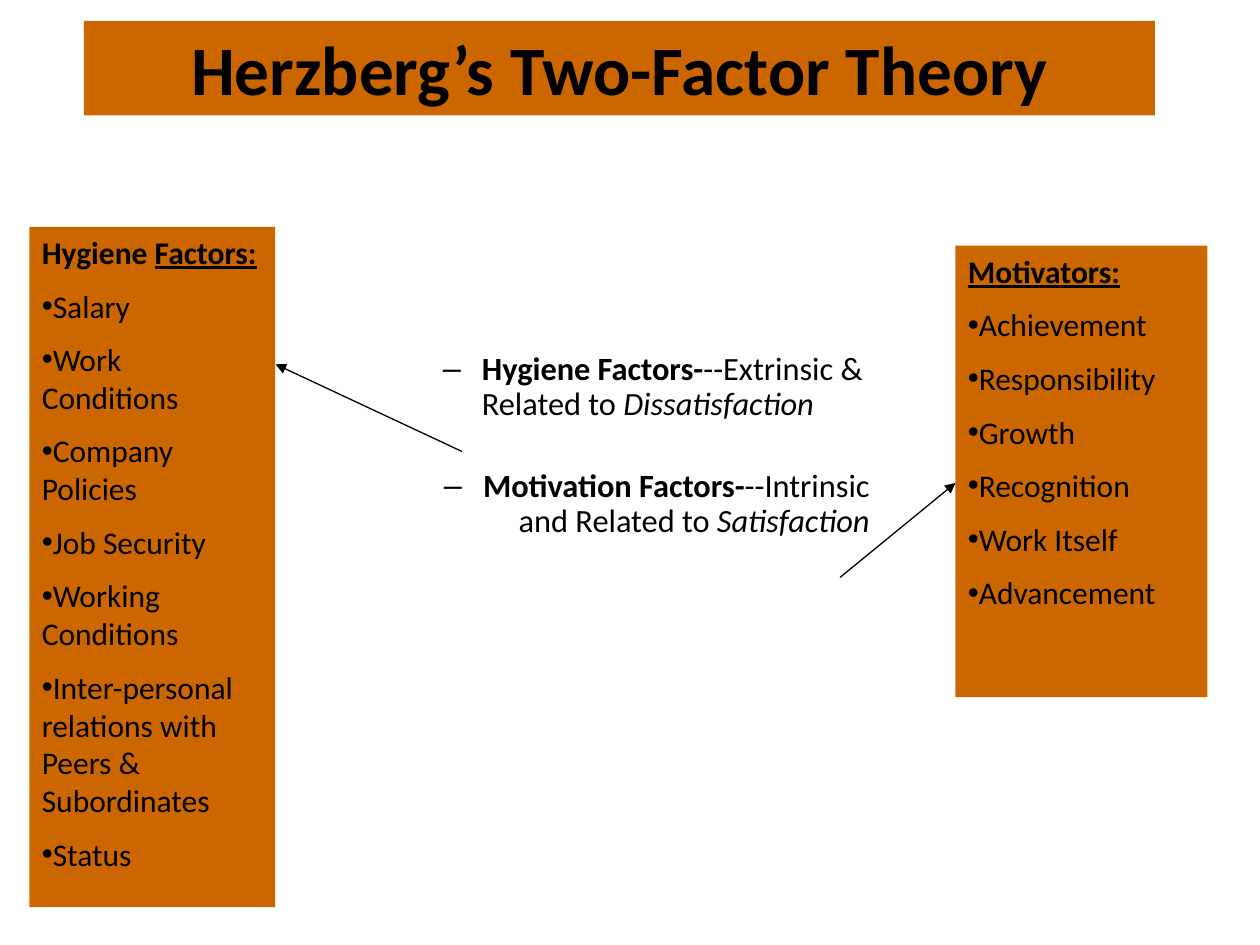
from dataclasses import dataclass

from lxml.etree import SubElement
from pptx import Presentation
from pptx.dml.color import RGBColor
from pptx.enum.shapes import MSO_CONNECTOR, MSO_SHAPE
from pptx.enum.text import MSO_ANCHOR, MSO_AUTO_SIZE, PP_ALIGN
from pptx.oxml.ns import qn
from pptx.util import Inches, Pt

COLORS = {"panel": "CC6600", "ink": "000000"}
FONT = "Calibri"
COLUMNS, ROWS = 120, 90

prs = Presentation()
prs.slide_width, prs.slide_height = Inches(10), Inches(7.5)


@dataclass
class Box:
    col: float
    row: float
    cols: float
    rows: float

    def place(self) -> tuple:
        return *grid(self.col, self.row), *grid(self.cols, self.rows)


@dataclass
class Panel:
    box: Box
    heading: list
    items: list


@dataclass
class Arrow:
    start: tuple
    end: tuple


@dataclass
class Factor:
    runs: list
    align: PP_ALIGN
    before: float


TITLE_BOX = Box(8, 2, 102, 9)
CENTER_BOX = Box(35, 33, 49, 25)
FACTORS = [
    Factor([("Hygiene Factors-", "b"), ("--Extrinsic & Related to ", ""),
            ("Dissatisfaction", "i")], PP_ALIGN.LEFT, 3.7),
    Factor([("Motivation Factors-", "b"), ("--Intrinsic and Related to ", ""),
            ("Satisfaction", "i")], PP_ALIGN.RIGHT, 27),
]
PANELS = [
    Panel(Box(2.8, 21.6, 23.4, 64.8), [("Hygiene ", "b"), ("Factors:", "bu")],
          ["Salary", "Work Conditions", "Company Policies", "Job Security",
           "Working Conditions",
           "Inter-personal relations with Peers & Subordinates", "Status"]),
    Panel(Box(91, 23.4, 24, 43), [("Motivators:", "bu")],
          ["Achievement", "Responsibility", "Growth", "Recognition",
           "Work Itself", "Advancement"]),
]
ARROWS = [Arrow((80, 55), (91, 46)), Arrow((44, 43), (26.25, 34.7))]


def grid(col: float, row: float) -> tuple:
    return int(prs.slide_width * col / COLUMNS), int(prs.slide_height * row / ROWS)


def rgb(name: str) -> RGBColor:
    return RGBColor.from_string(COLORS[name])


def write(p, runs: list, *, size: float, align=PP_ALIGN.LEFT, before: float = 0,
          spacing: float = 1, bullet: str = "", margin: float = 0,
          indent: float = 0) -> None:
    p.alignment, p.space_before, p.line_spacing = align, Pt(before), spacing
    pPr = p._p.get_or_add_pPr()
    pPr.set("marL", str(Inches(margin)))
    pPr.set("indent", str(Inches(indent)))
    if bullet:
        SubElement(pPr, qn("a:buFont"), typeface="Arial")
        SubElement(pPr, qn("a:buChar"), char=bullet)
    for text, style in runs:
        r = p.add_run()
        r.text = text
        f = r.font
        f.name, f.size = FONT, Pt(size)
        f.color.rgb = rgb("ink")
        f.bold, f.italic, f.underline = (k in style for k in "biu")


def fill_panel(sp) -> None:
    sp.fill.solid()
    sp.fill.fore_color.rgb = rgb("panel")
    sp.line.fill.background()


def draw_title(s, text: str) -> None:
    sp = s.shapes.title
    sp.left, sp.top, sp.width, sp.height = TITLE_BOX.place()
    fill_panel(sp)
    tf = sp.text_frame
    tf.auto_size, tf.vertical_anchor = MSO_AUTO_SIZE.NONE, MSO_ANCHOR.MIDDLE
    write(tf.paragraphs[0], [(text, "b")], size=39.6, align=PP_ALIGN.CENTER)


def draw_factors(s, factors: list) -> None:
    tf = s.shapes.add_textbox(*CENTER_BOX.place()).text_frame
    tf.word_wrap = True
    for i, factor in enumerate(factors):
        p = tf.add_paragraph() if i else tf.paragraphs[0]
        write(p, factor.runs, size=18.5, align=factor.align, before=factor.before,
              spacing=0.9, bullet="–", margin=0.81, indent=-0.31)


def draw_panel(s, panel: Panel) -> None:
    sp = s.shapes.add_shape(MSO_SHAPE.RECTANGLE, *panel.box.place())
    sp.shadow.inherit = False
    fill_panel(sp)
    tf = sp.text_frame
    tf.word_wrap, tf.vertical_anchor = True, MSO_ANCHOR.TOP
    write(tf.paragraphs[0], panel.heading, size=18, before=9)
    for item in panel.items:
        write(tf.add_paragraph(), [(item, "")], size=18, before=9, bullet="•")


def draw_arrow(s, arrow: Arrow) -> None:
    c = s.shapes.add_connector(MSO_CONNECTOR.STRAIGHT, *grid(*arrow.start),
                               *grid(*arrow.end))
    c.line.color.rgb, c.line.width = rgb("ink"), Pt(0.75)
    SubElement(c.line._get_or_add_ln(), qn("a:tailEnd"), type="triangle")
    SubElement(c._element.spPr, qn("a:effectLst"))


def main() -> None:
    s = prs.slides.add_slide(prs.slide_layouts[5])
    draw_title(s, "Herzberg’s Two-Factor Theory")
    draw_factors(s, FACTORS)
    for panel in PANELS:
        draw_panel(s, panel)
    for arrow in ARROWS:
        draw_arrow(s, arrow)
    prs.save("out.pptx")


if __name__ == "__main__":
    main()
